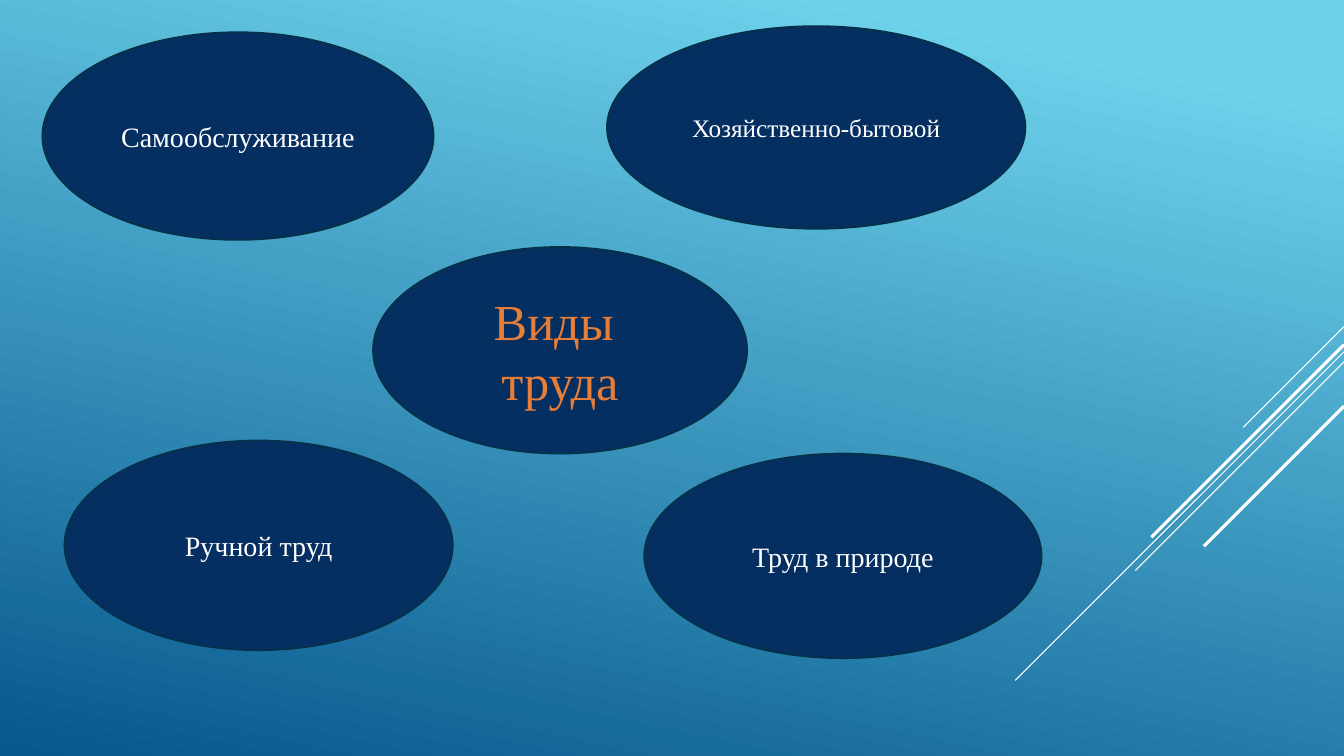
import pptx
import pptx.dml.color
import pptx.enum.shapes
import pptx.enum.text
import pptx.oxml.ns
import pptx.util
from lxml import etree
from pptx.util import Inches


def color(hex_value):
    return pptx.dml.color.RGBColor.from_string(hex_value)


deck = pptx.Presentation()
deck.slide_width = Inches(13.33)
deck.slide_height = Inches(7.5)
slide = deck.slides.add_slide(deck.slide_layouts[6])

# Background: light at the top right, dark at the bottom left
background = slide.background.fill
background.gradient()
background.gradient_angle = 360 - 102
for stop, (position, shade) in zip(background.gradient_stops,
                                   [(0.1, "6ED2EB"), (1, "06588E")]):
    stop.position = position
    stop.color.rgb = color(shade)

# Diagonal rays from the right edge, all at 45 degrees: start height, run, weight
rays = [
    (3.24, 1.0, 0.75),
    (3.49, 3.26, 0.75),
    (3.59, 2.07, 0.75),
    (3.42, 1.91, 2.25),
    (4.03, 1.39, 2.25),
]
for start, run_length, weight in rays:
    ray = slide.shapes.add_connector(
        pptx.enum.shapes.MSO_CONNECTOR.STRAIGHT,
        Inches(13.33), Inches(start),
        Inches(13.33 - run_length), Inches(start + run_length))
    ray.line.color.rgb = color("FFFFFF")
    ray.line.width = pptx.util.Pt(weight)
    etree.SubElement(ray.element.spPr, pptx.oxml.ns.qn("a:effectLst"))

# Kinds of labour around the central topic: lines, box, text size, text colour
labour_kinds = [
    (["Хозяйственно-бытовой"], (6.02, 0.26, 4.15, 2.01), 18, "FFFFFF"),
    (["Самообслуживание"], (0.42, 0.32, 3.88, 2.06), 20, "FFFFFF"),
    (["Труд в природе"], (6.39, 4.5, 3.94, 2.03), 20, "FFFFFF"),
    (["Ручной труд"], (0.64, 4.37, 3.85, 2.08), 20, "FFFFFF"),
    (["Виды ", "труда"], (3.7, 2.45, 3.71, 2.05), 36, "E87D37"),
]
for lines, box, size, text_color in labour_kinds:
    oval = slide.shapes.add_shape(pptx.enum.shapes.MSO_SHAPE.OVAL,
                                  *[Inches(length) for length in box])
    oval.shadow.inherit = False
    oval.fill.solid()
    oval.fill.fore_color.rgb = color("052F61")
    oval.line.color.rgb = color("043148")
    oval.line.width = pptx.util.Pt(1.25)
    oval.text_frame.word_wrap = True
    oval.text_frame.vertical_anchor = pptx.enum.text.MSO_ANCHOR.MIDDLE
    label = oval.text_frame.paragraphs[0]
    label.alignment = pptx.enum.text.PP_ALIGN.CENTER
    for number, line in enumerate(lines):
        if number:
            label.add_line_break()
        words = label.add_run()
        words.text = line
        words.font.name = "Times New Roman"
        words.font.size = pptx.util.Pt(size)
        words.font.color.rgb = color(text_color)

deck.save("out.pptx")
